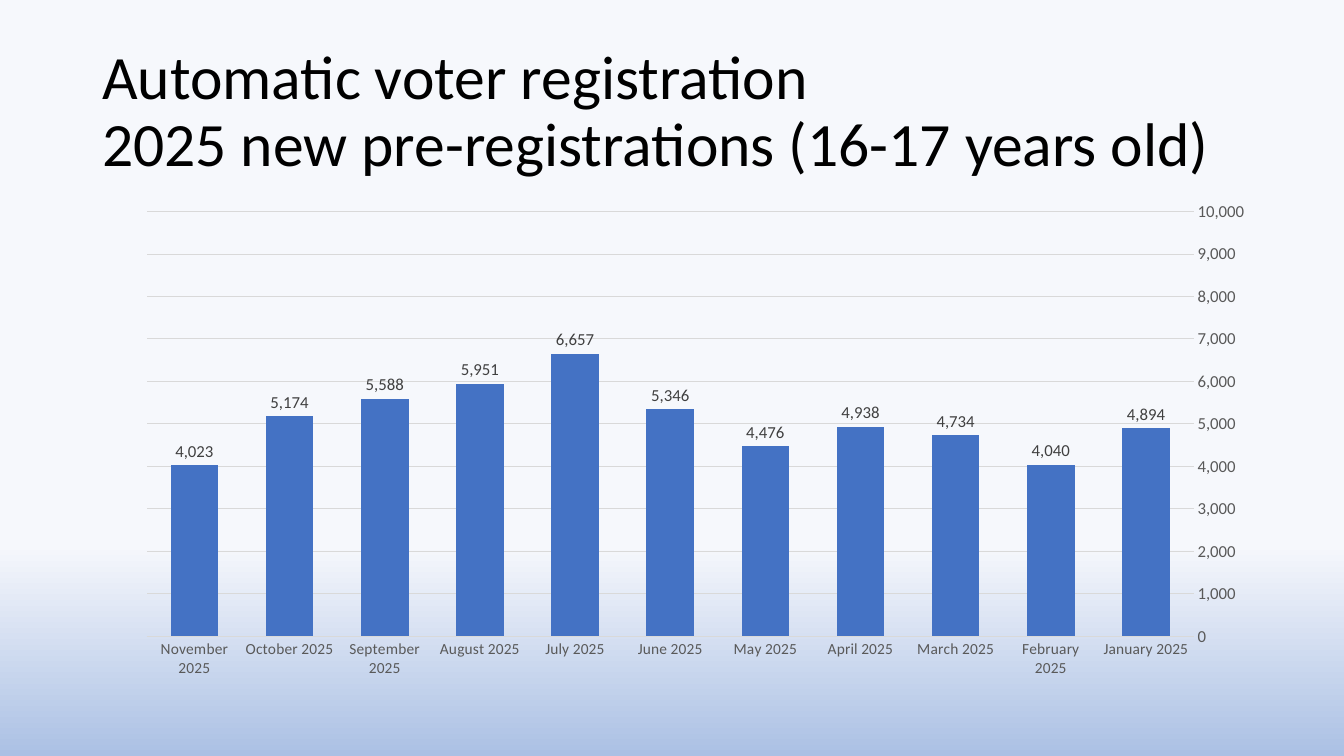
import pptx
import pptx.chart.data
import pptx.dml.color
import pptx.enum.chart
import pptx.enum.text
import pptx.oxml
import pptx.oxml.ns
import pptx.util

RGBColor = pptx.dml.color.RGBColor
BLACK = RGBColor(0x00, 0x00, 0x00)
AXIS_GREY = RGBColor(0x59, 0x59, 0x59)
LABEL_GREY = RGBColor(0x40, 0x40, 0x40)
GRID_GREY = RGBColor(0xD9, 0xD9, 0xD9)
BAR_BLUE = RGBColor(0x44, 0x72, 0xC4)
SKY_PALE = RGBColor(0xF6, 0xF8, 0xFC)
SKY_BLUE = RGBColor(0xAB, 0xC0, 0xE4)

MONTHS = ["January", "February", "March", "April", "May", "June", "July",
          "August", "September", "October", "November"]
REGISTRATIONS = [4894, 4040, 4734, 4938, 4476, 5346, 6657, 5951, 5588, 5174, 4023]
PLOT_AREA = {"x": 0.047, "y": 0.02, "w": 0.903, "h": 0.886}


class SlideBuilder:
    """Holds the style and the current slide, and adds elements to it."""

    FONT = "Calibri"
    EMU_PER_PX = 9525

    def __init__(self, deck):
        self.page = deck.slides.add_slide(deck.slide_layouts[6])

    def place(self, *lengths):
        return [length * self.EMU_PER_PX for length in lengths]

    def style_font(self, font, size, color):
        font.name = self.FONT
        font.size = pptx.util.Pt(size)
        font.color.rgb = color

    def style_line(self, line):
        line.color.rgb = GRID_GREY
        line.width = pptx.util.Pt(0.75)

    def background(self, *stops):
        fill = self.page.background.fill
        fill.gradient()
        fill.gradient_angle = 270
        for stop, (position, color) in zip(fill.gradient_stops, stops):
            stop.position = position
            stop.color.rgb = color

    def title(self, text, left, top, width, height):
        box = self.page.shapes.add_textbox(*self.place(left, top, width, height))
        frame = box.text_frame
        frame.word_wrap = True
        frame.vertical_anchor = pptx.enum.text.MSO_ANCHOR.MIDDLE
        frame.text = text
        for para in frame.paragraphs:
            para.line_spacing = 0.9
            for span in para.runs:
                self.style_font(span.font, 44, BLACK)

    def column_chart(self, categories, values, left, top, width, height):
        data = pptx.chart.data.CategoryChartData(number_format="#,##0")
        data.categories = categories
        data.add_series("Series 1", values)
        kind = pptx.enum.chart.XL_CHART_TYPE.COLUMN_CLUSTERED
        frame = self.page.shapes.add_chart(
            kind, *self.place(left, top, width, height), data)
        chart = frame.chart
        chart.has_title = False
        chart.has_legend = False
        self.style_font(chart.font, 10, BLACK)
        self.style_columns(chart.plots[0])
        self.style_axes(chart.category_axis, chart.value_axis)
        self.fix_plot_area(chart, PLOT_AREA)

    def style_columns(self, plot):
        plot.gap_width = 100
        plot.overlap = -27
        plot.vary_by_categories = False
        fill = plot.series[0].format.fill
        fill.solid()
        fill.fore_color.rgb = BAR_BLUE
        labels = plot.series[0].data_labels
        labels.show_value = True
        labels.position = pptx.enum.chart.XL_LABEL_POSITION.OUTSIDE_END
        labels.number_format = "#,##0"
        labels.number_format_is_linked = False
        self.style_font(labels.font, 12, LABEL_GREY)

    def style_axes(self, month_axis, count_axis):
        for axis, size in ((month_axis, 11), (count_axis, 12)):
            axis.major_tick_mark = pptx.enum.chart.XL_TICK_MARK.NONE
            axis.minor_tick_mark = pptx.enum.chart.XL_TICK_MARK.NONE
            self.style_font(axis.tick_labels.font, size, AXIS_GREY)
        month_axis.reverse_order = True
        month_axis.crosses = pptx.enum.chart.XL_AXIS_CROSSES.MAXIMUM
        self.style_line(month_axis.format.line)
        count_axis.minimum_scale = 0
        count_axis.maximum_scale = 10000
        count_axis.major_unit = 1000
        count_axis.tick_labels.number_format = "#,##0"
        count_axis.tick_labels.number_format_is_linked = False
        count_axis.format.line.fill.background()
        count_axis.has_major_gridlines = True
        self.style_line(count_axis.major_gridlines.format.line)

    def fix_plot_area(self, chart, fractions):
        tags = '<c:layoutTarget val="inner"/><c:xMode val="edge"/><c:yMode val="edge"/>'
        tags += "".join(f'<c:{key} val="{part}"/>' for key, part in fractions.items())
        names = pptx.oxml.ns.nsdecls("c")
        layout = pptx.oxml.parse_xml(
            f"<c:layout {names}><c:manualLayout>{tags}</c:manualLayout></c:layout>")
        plot_area = chart._chartSpace.chart.plotArea
        for old in plot_area.findall(pptx.oxml.ns.qn("c:layout")):
            plot_area.remove(old)
        plot_area.insert(0, layout)


def main():
    deck = pptx.Presentation()
    deck.slide_width = 1280 * SlideBuilder.EMU_PER_PX
    deck.slide_height = 720 * SlideBuilder.EMU_PER_PX
    slide = SlideBuilder(deck)
    slide.background((0.72, SKY_PALE), (1, SKY_BLUE))
    slide.title("Automatic voter registration \v"
                "2025 new pre-registrations (16-17 years old)", 88, 38, 1104, 139)
    slide.column_chart([f"{month} 2025" for month in MONTHS], REGISTRATIONS,
                       88, 192, 1104, 457)
    deck.save("out.pptx")


if __name__ == "__main__":
    main()
